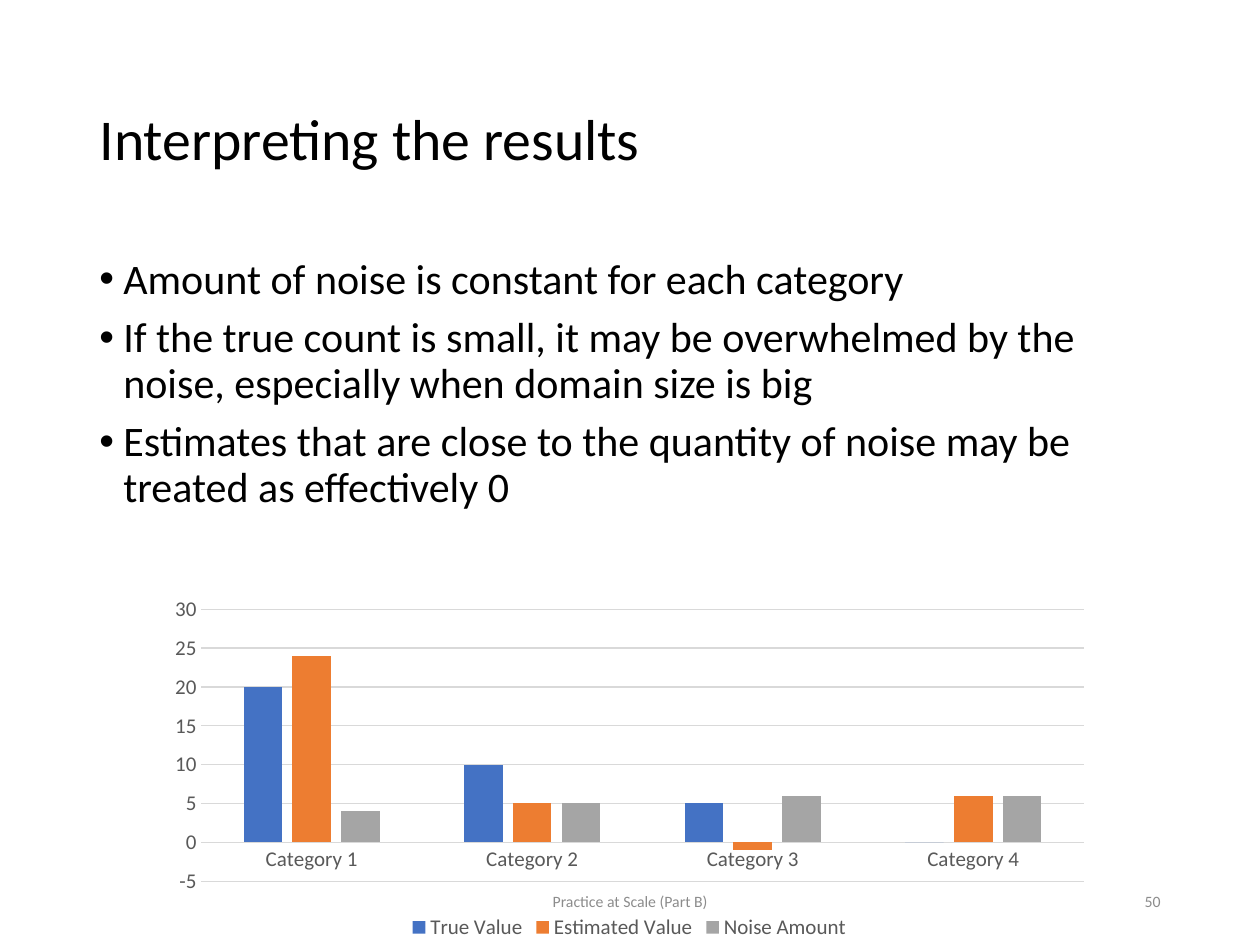
from dataclasses import dataclass

from lxml.etree import SubElement
from pptx import Presentation
from pptx.chart.data import CategoryChartData
from pptx.dml.color import RGBColor
from pptx.enum.chart import XL_CHART_TYPE, XL_LEGEND_POSITION, XL_TICK_MARK
from pptx.enum.text import MSO_ANCHOR, MSO_AUTO_SIZE, PP_ALIGN
from pptx.oxml.ns import qn
from pptx.util import Emu, Pt

EMU_PER_PX = 9144


@dataclass(frozen=True)
class Theme:
    font: str = "Calibri"
    ink: str = "000000"
    axis_ink: str = "595959"
    footer_ink: str = "8C8C8C"
    grid: str = "D9D9D9"
    title_size: int = 33
    body_size: int = 24
    chart_size: int = 12
    footer_size: int = 9
    line_spacing: float = 0.9
    bullet_gap: float = 7.5
    bullet_indent: int = 19
    grid_width: float = 0.75


@dataclass(frozen=True)
class Box:
    left: int
    top: int
    width: int
    height: int

    def emu(self) -> list[Emu]:
        return [px(v) for v in (self.left, self.top, self.width, self.height)]


@dataclass(frozen=True)
class Series:
    name: str
    values: tuple[int, ...]
    color: str


@dataclass(frozen=True)
class FooterItem:
    text: str
    box: Box
    align: PP_ALIGN


THEME = Theme()
TITLE_BOX = Box(69, 40, 862, 145)
BULLETS_BOX = Box(69, 200, 862, 476)
CHART_BOX = Box(124, 468, 751, 282)
BULLETS = (
    "Amount of noise is constant for each category",
    "If the true count is small, it may be overwhelmed by the noise, "
    "especially when domain size is big",
    "Estimates that are close to the quantity of noise may be treated as effectively 0",
)
CATEGORIES = [f"Category {number}" for number in range(1, 5)]
SERIES = (
    Series("True Value", (20, 10, 5, 0), "4472C4"),
    Series("Estimated Value", (24, 5, -1, 6), "ED7D31"),
    Series("Noise Amount", (4, 5, 6, 6), "A5A5A5"),
)
FOOTER = (
    FooterItem("50", Box(706, 695, 225, 40), PP_ALIGN.RIGHT),
    FooterItem("Practice at Scale (Part B)", Box(331, 695, 338, 40), PP_ALIGN.CENTER),
)


def px(length: int) -> Emu:
    return Emu(length * EMU_PER_PX)


def style_font(font, size: int, color: str) -> None:
    font.name = THEME.font
    font.size = Pt(size)
    font.bold = False
    font.color.rgb = RGBColor.from_string(color)


def add_run(paragraph, text: str, size: int, color: str) -> None:
    run = paragraph.add_run()
    run.text = text
    style_font(run.font, size, color)


def style_line(line) -> None:
    line.color.rgb = RGBColor.from_string(THEME.grid)
    line.width = Pt(THEME.grid_width)


def set_title(slide, text: str) -> None:
    title = slide.shapes.title
    title.left, title.top, title.width, title.height = TITLE_BOX.emu()
    frame = title.text_frame
    frame.auto_size = MSO_AUTO_SIZE.NONE
    frame.vertical_anchor = MSO_ANCHOR.MIDDLE
    heading = frame.paragraphs[0]
    heading.alignment = PP_ALIGN.LEFT
    heading.line_spacing = THEME.line_spacing
    add_run(heading, text, THEME.title_size, THEME.ink)


def add_bullets(slide, box: Box, texts: tuple[str, ...]) -> None:
    frame = slide.shapes.add_textbox(*box.emu()).text_frame
    frame.word_wrap = True
    for index, text in enumerate(texts):
        bullet = frame.add_paragraph() if index else frame.paragraphs[0]
        properties = bullet._p.get_or_add_pPr()
        properties.set("marL", str(px(THEME.bullet_indent)))
        properties.set("indent", str(-px(THEME.bullet_indent)))
        SubElement(properties, qn("a:buFont"), typeface="Arial")
        SubElement(properties, qn("a:buChar"), char="•")
        bullet.line_spacing = THEME.line_spacing
        if index:
            bullet.space_before = Pt(THEME.bullet_gap)
        add_run(bullet, text, THEME.body_size, THEME.ink)


def add_noise_chart(slide, box: Box, series: tuple[Series, ...]) -> None:
    data = CategoryChartData()
    data.categories = CATEGORIES
    for entry in series:
        data.add_series(entry.name, entry.values)
    chart = slide.shapes.add_chart(
        XL_CHART_TYPE.COLUMN_CLUSTERED, *box.emu(), data
    ).chart
    style_font(chart.font, THEME.chart_size, THEME.axis_ink)
    chart.has_title = False
    chart.has_legend = True
    chart.legend.position = XL_LEGEND_POSITION.BOTTOM
    chart.legend.include_in_layout = False
    style_font(chart.legend.font, THEME.chart_size, THEME.axis_ink)

    for axis in (chart.category_axis, chart.value_axis):
        axis.major_tick_mark = XL_TICK_MARK.NONE
        axis.minor_tick_mark = XL_TICK_MARK.NONE
        style_font(axis.tick_labels.font, THEME.chart_size, THEME.axis_ink)
    style_line(chart.category_axis.format.line)
    chart.value_axis.format.line.fill.background()
    chart.value_axis.has_major_gridlines = True
    style_line(chart.value_axis.major_gridlines.format.line)

    columns = chart.plots[0]
    columns.gap_width = 219
    columns.overlap = -27
    columns.vary_by_categories = False
    for column, entry in zip(columns.series, series):
        column.invert_if_negative = False
        column.format.fill.solid()
        column.format.fill.fore_color.rgb = RGBColor.from_string(entry.color)


def add_footer(slide, item: FooterItem) -> None:
    frame = slide.shapes.add_textbox(*item.box.emu()).text_frame
    frame.word_wrap = True
    frame.vertical_anchor = MSO_ANCHOR.MIDDLE
    line = frame.paragraphs[0]
    line.alignment = item.align
    add_run(line, item.text, THEME.footer_size, THEME.footer_ink)


def main() -> None:
    deck = Presentation()
    deck.slide_width, deck.slide_height = px(1000), px(750)
    slide = deck.slides.add_slide(deck.slide_layouts[5])
    set_title(slide, "Interpreting the results")
    add_bullets(slide, BULLETS_BOX, BULLETS)
    add_noise_chart(slide, CHART_BOX, SERIES)
    for item in FOOTER:
        add_footer(slide, item)
    deck.save("out.pptx")


if __name__ == "__main__":
    main()
